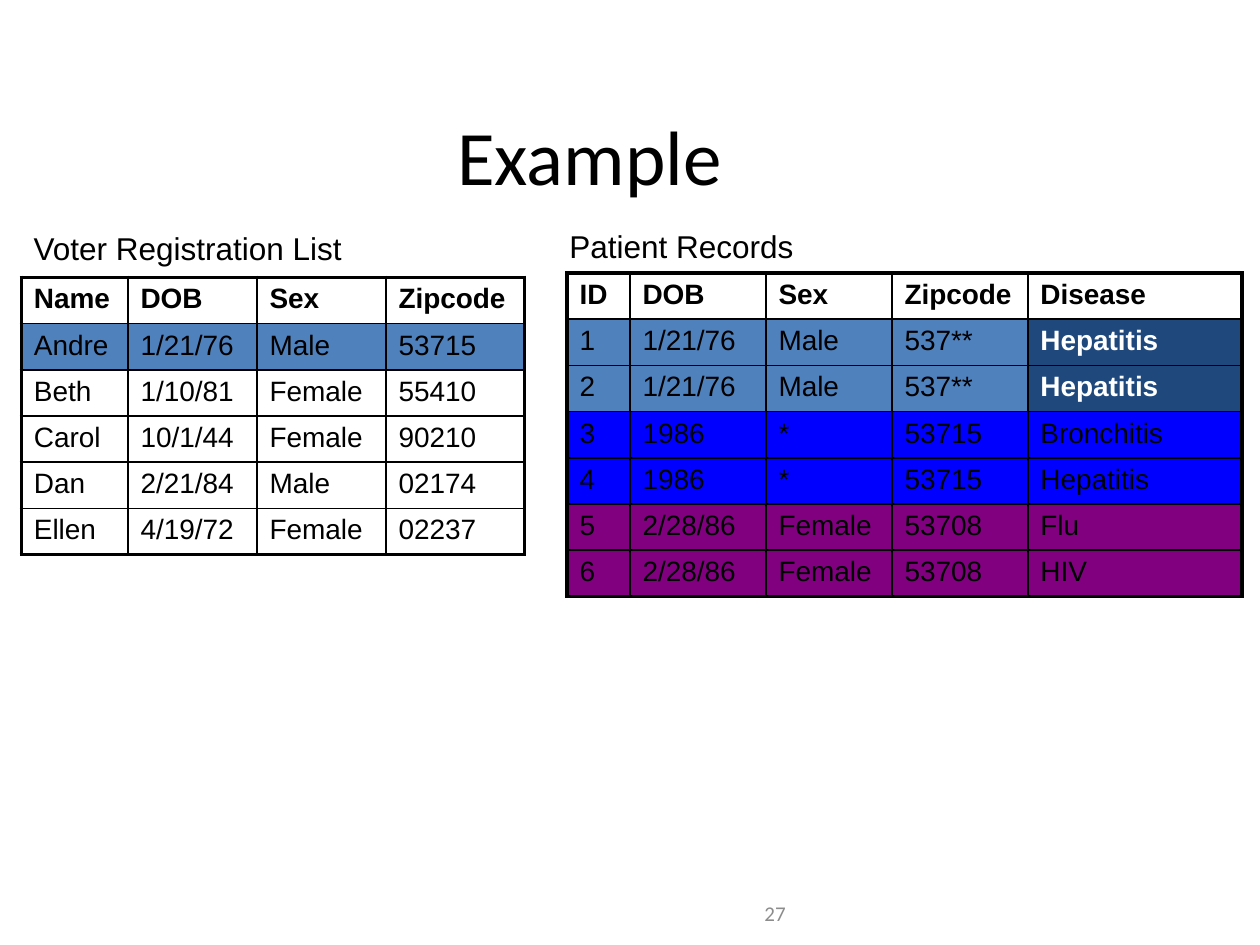
import pptx
import pptx.dml.color
import pptx.enum.text
import pptx.oxml.ns
import pptx.util
from lxml import etree

Cm, Pt = pptx.util.Cm, pptx.util.Pt

COLOURS = {
    "text": "000000",
    "inverse": "FFFFFF",
    "number": "8C8C8C",
    "border": "000000",
    "match": "4F81BD",
    "disclosed": "1F497D",
    "group_b": "0000FF",
    "group_c": "800080",
}
ROW_HEIGHT = 0.93
OUTER, INNER = 2.25, 1

VOTERS = [
    ["Name", "DOB", "Sex", "Zipcode"],
    ["Andre", "1/21/76", "Male", "53715"],
    ["Beth", "1/10/81", "Female", "55410"],
    ["Carol", "10/1/44", "Female", "90210"],
    ["Dan", "2/21/84", "Male", "02174"],
    ["Ellen", "4/19/72", "Female", "02237"],
]
PATIENTS = [
    ["ID", "DOB", "Sex", "Zipcode", "Disease"],
    ["1", "1/21/76", "Male", "537**", "Hepatitis"],
    ["2", "1/21/76", "Male", "537**", "Hepatitis"],
    ["3", "1986", "*", "53715", "Bronchitis"],
    ["4", "1986", "*", "53715", "Hepatitis"],
    ["5", "2/28/86", "Female", "53708", "Flu"],
    ["6", "2/28/86", "Female", "53708", "HIV"],
]
VOTER_FILLS = [None, "match"] + [None] * 4
PATIENT_FILLS = [None] + ["match"] * 2 + ["group_b"] * 2 + ["group_c"] * 2


def rgb(name):
    return pptx.dml.color.RGBColor.from_string(COLOURS[name])


def write(frame, text, size, font="Arial", colour="text", bold=False, before=0):
    paragraph = frame.paragraphs[0]
    paragraph.text = text
    paragraph.space_before = Pt(before)
    style = paragraph.runs[0].font
    style.name, style.size, style.bold = font, Pt(size), bold
    style.color.rgb = rgb(colour)
    return paragraph


def add_label(slide, text, left, top, width, height, size, middle=False, **style):
    frame = slide.shapes.add_textbox(Cm(left), Cm(top), Cm(width), Cm(height)).text_frame
    frame.word_wrap = True
    if middle:
        frame.vertical_anchor = pptx.enum.text.MSO_ANCHOR.MIDDLE
    return write(frame, text, size, **style)


def set_borders(cell, widths):
    """Draw the cell's edges, given as {"L": points, "R": ..., "T": ..., "B": ...}."""
    qn = pptx.oxml.ns.qn
    properties = cell._tc.get_or_add_tcPr()
    for side, width in widths.items():
        line = etree.SubElement(properties, qn(f"a:ln{side}"), w=str(int(Pt(width))))
        fill = etree.SubElement(line, qn("a:solidFill"))
        etree.SubElement(fill, qn("a:srgbClr"), val=COLOURS["border"])


def add_records(slide, records, row_fills, column_widths, left, top):
    last_row, last_column = len(records) - 1, len(column_widths) - 1
    table = slide.shapes.add_table(
        len(records), len(column_widths), Cm(left), Cm(top),
        Cm(sum(column_widths)), Cm(ROW_HEIGHT * len(records))).table
    table.horz_banding = False
    for column, width in zip(table.columns, column_widths):
        column.width = Cm(width)

    for r, (record, row_fill) in enumerate(zip(records, row_fills)):
        table.rows[r].height = Cm(ROW_HEIGHT)
        for c, value in enumerate(record):
            cell = table.cell(r, c)
            # The disease of the matched patients stands out
            disclosed = row_fill == "match" and records[0][c] == "Disease"
            fill = "disclosed" if disclosed else row_fill
            write(cell.text_frame, value, 16, bold=r == 0 or disclosed,
                  colour="inverse" if disclosed else "text", before=0.8)
            set_borders(cell, {
                "L": OUTER if c == 0 else INNER,
                "R": OUTER if c == last_column else INNER,
                "T": OUTER if r == 0 else INNER,
                "B": OUTER if r == last_row else INNER,
            })
            if fill:
                cell.fill.solid()
                cell.fill.fore_color.rgb = rgb(fill)
            else:
                cell.fill.background()


def main():
    deck = pptx.Presentation()
    deck.slide_width, deck.slide_height = Cm(25.4), Cm(19.05)
    slide = deck.slides.add_slide(deck.slide_layouts[6])

    # Page number and title
    add_label(slide, "27", 15.16, 18.06, 5.41, 0.69, 12, middle=True,
              font="Calibri", colour="number")
    title = add_label(slide, "Example", 0.43, 2.41, 22.91, 1.4, 44, middle=True,
                      font="Calibri")
    title.alignment = pptx.enum.text.PP_ALIGN.CENTER

    # Public voter list
    add_label(slide, "Voter Registration List", 0.43, 4.5, 9.32, 1.02, 18, before=1)
    add_records(slide, VOTERS, VOTER_FILLS, [2.15, 2.6, 2.6, 2.79], 0.43, 5.59)

    # Anonymised patient records
    add_label(slide, "Patient Records", 11.23, 4.45, 9.32, 1.02, 18, before=1)
    add_records(slide, PATIENTS, PATIENT_FILLS,
                [1.27, 2.74, 2.54, 2.74, 4.32], 11.43, 5.5)

    deck.save("out.pptx")


if __name__ == "__main__":
    main()
